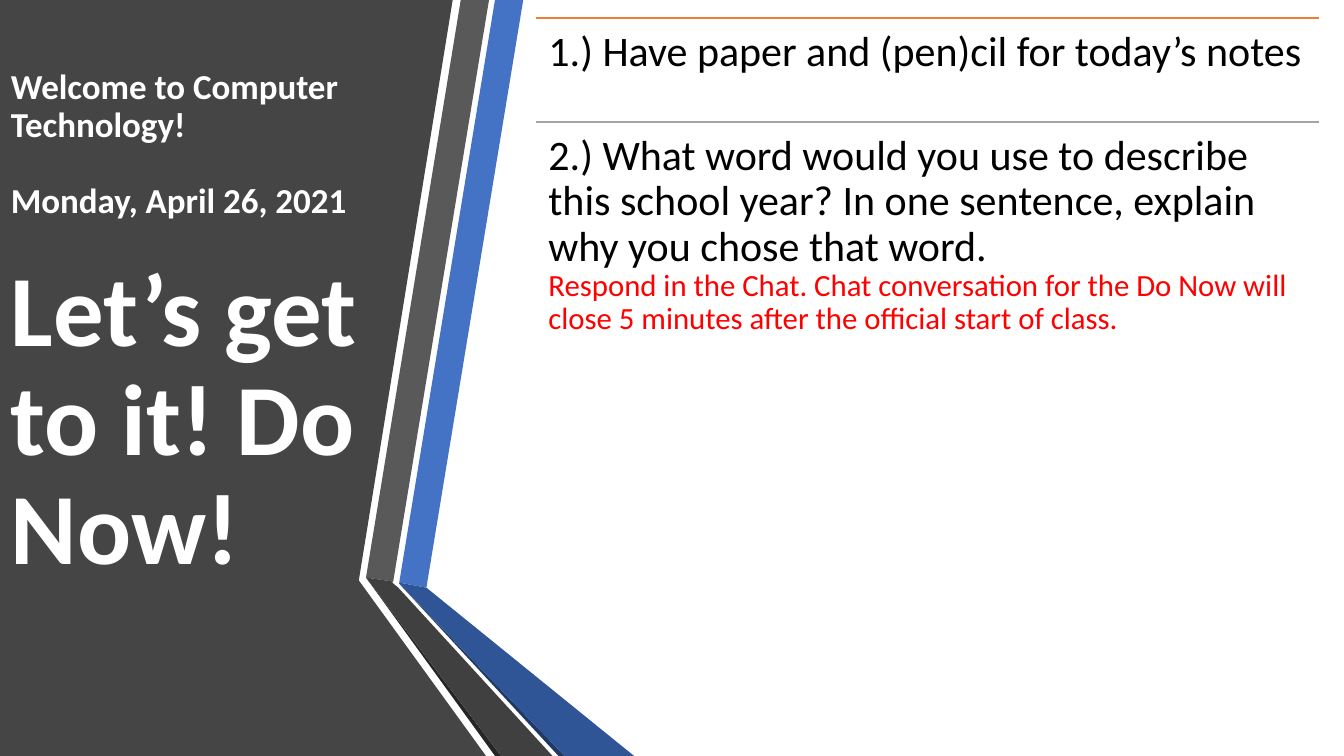
from lxml.etree import SubElement
from pptx import Presentation
from pptx.dml.color import RGBColor
from pptx.enum.shapes import MSO_CONNECTOR
from pptx.enum.text import MSO_ANCHOR
from pptx.oxml.ns import qn
from pptx.util import Emu, Pt

PX = 9144  # EMU per px, 100 px to the inch
FONT = "Calibri"

WHITE = RGBColor(0xFF, 0xFF, 0xFF)
BLACK = RGBColor(0x00, 0x00, 0x00)
RED = RGBColor(0xFF, 0x00, 0x00)
PANEL_GRAY = RGBColor(0x45, 0x45, 0x45)
BLUE = RGBColor(0x44, 0x72, 0xC4)
MID_BLUE = RGBColor(0x2F, 0x55, 0x97)
DARK_BLUE = RGBColor(0x20, 0x38, 0x64)
GRAY = RGBColor(0x59, 0x59, 0x59)
DARK_GRAY = RGBColor(0x40, 0x40, 0x40)
NEAR_BLACK = RGBColor(0x26, 0x26, 0x26)
ORANGE = RGBColor(0xED, 0x7D, 0x31)
LIGHT_GRAY = RGBColor(0xA5, 0xA5, 0xA5)

# Side panel and folded ribbons, back to front
PANEL = (PANEL_GRAY, [(0, 0), (449, 0), (356, 575), (356, 576), (482, 750), (0, 750)])
RIBBONS = [
    (BLUE, [(396, 578), (423, 583), (519, 0), (491, 0)]),
    (GRAY, [(485, 0), (457, 0), (363, 573), (390, 577)]),
    (NEAR_BLACK, [(363, 573), (491, 750), (497, 750)]),
    (DARK_BLUE, [(396, 579), (554, 750), (560, 750)]),
    (MID_BLUE, [(396, 579), (560, 750), (629, 750), (423, 583), (396, 578)]),
    (DARK_GRAY, [(548, 750), (395, 583), (389, 578), (390, 577), (363, 573), (497, 750)]),
]

# Paragraphs: text, size, colour, bold, space before in points
TITLE = [
    ("Welcome to Computer Technology!", 25, WHITE, True, 0),
    ("Monday, April 26, 2021", 25, WHITE, True, 27.5),
    ("Let’s get to it! Do Now!", 72, WHITE, True, 27.5),
]
# Tasks: top, height, rule colour, paragraphs
TASKS = [
    (18, 103, ORANGE, [
        ("1.) Have paper and (pen)cil for today’s notes", 30, BLACK, False, 0),
    ]),
    (121, 385, LIGHT_GRAY, [
        ("2.) What word would you use to describe this school year? "
         "In one sentence, explain why you chose that word.", 30, BLACK, False, 0),
        ("Respond in the Chat. Chat conversation for the Do Now will "
         "close 5 minutes after the official start of class.", 22, RED, False, 0),
    ]),
]
TASK_LEFT, TASK_WIDTH = 532, 776


def px(length):
    return Emu(length * PX)


def add_polygon(slide, color, points):
    builder = slide.shapes.build_freeform(*points[0], scale=PX)
    builder.add_line_segments(points[1:], close=True)
    polygon = builder.convert_to_shape()
    polygon.shadow.inherit = False
    polygon.fill.solid()
    polygon.fill.fore_color.rgb = color
    polygon.line.fill.background()


def add_rule(slide, left, top, width, color):
    rule = slide.shapes.add_connector(
        MSO_CONNECTOR.STRAIGHT, px(left), px(top), px(left + width), px(top))
    rule.line.color.rgb = color
    rule.line.width = Pt(1)
    SubElement(rule.line._get_or_add_ln().getparent(), qn("a:effectLst"))


def add_text(slide, box, insets, paragraphs, anchor=MSO_ANCHOR.TOP):
    frame = slide.shapes.add_textbox(*map(px, box)).text_frame
    frame.word_wrap = True
    frame.vertical_anchor = anchor
    (frame.margin_left, frame.margin_top,
     frame.margin_right, frame.margin_bottom) = map(px, insets)
    for index, (text, size, color, bold, before) in enumerate(paragraphs):
        paragraph = frame.add_paragraph() if index else frame.paragraphs[0]
        paragraph.line_spacing = 0.9
        paragraph.space_before = Pt(before)
        run = paragraph.add_run()
        run.text = text
        run.font.name = FONT
        run.font.size = Pt(size)
        run.font.bold = bold
        run.font.color.rgb = color


def main():
    deck = Presentation()
    deck.slide_width, deck.slide_height = px(1333), px(750)
    slide = deck.slides.add_slide(deck.slide_layouts[6])

    # Side panel with ribbons
    for color, points in [PANEL, *RIBBONS]:
        add_polygon(slide, color, points)

    # Title, raised by a deep bottom inset
    add_text(slide, (1, 105, 456, 520), (10, 5, 10, 85), TITLE, MSO_ANCHOR.MIDDLE)

    # Tasks, each under its rule
    for top, height, color, paragraphs in TASKS:
        add_rule(slide, TASK_LEFT, top, TASK_WIDTH, color)
        add_text(slide, (TASK_LEFT, top, TASK_WIDTH, height), (12,) * 4, paragraphs)

    deck.save("out.pptx")


if __name__ == "__main__":
    main()
